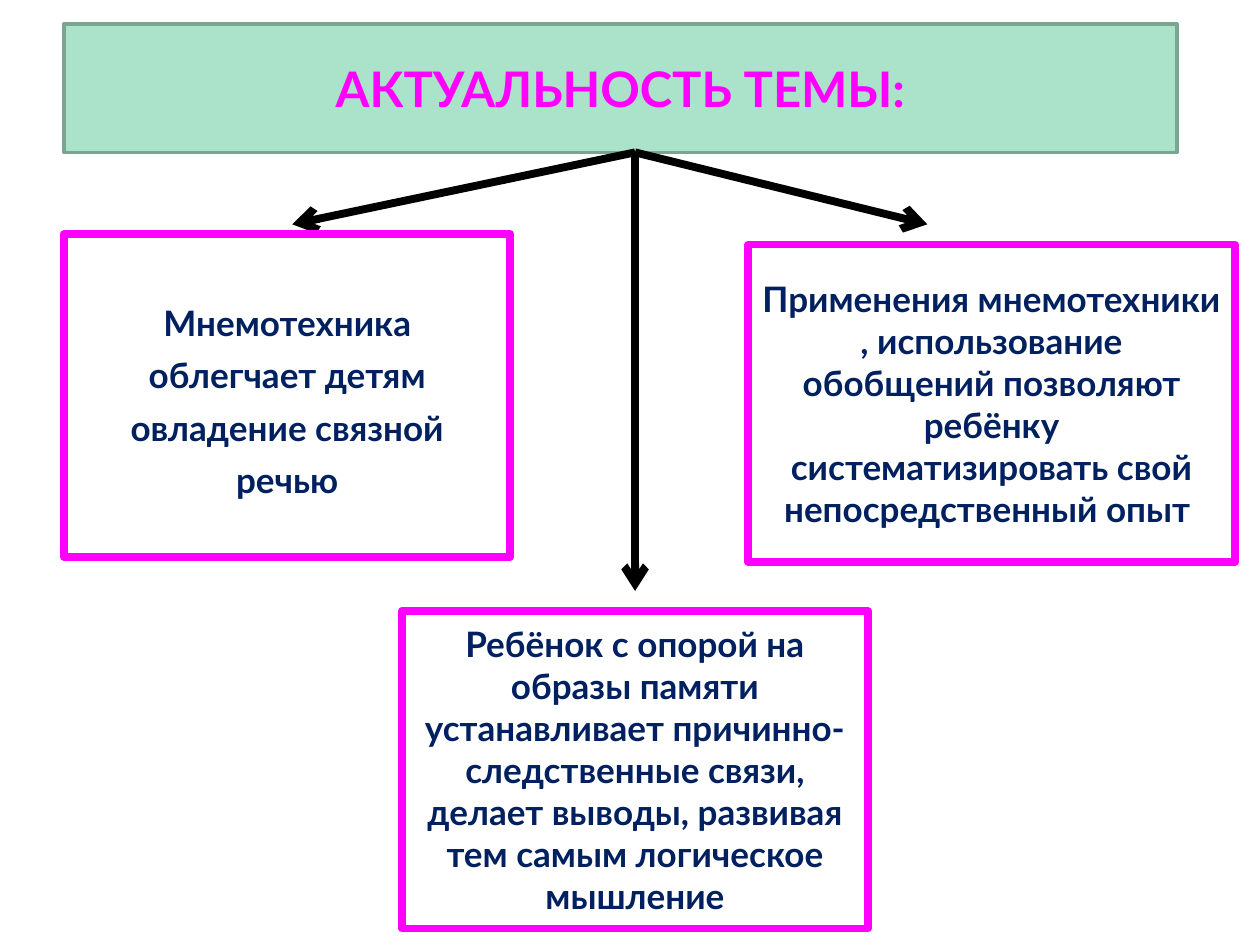
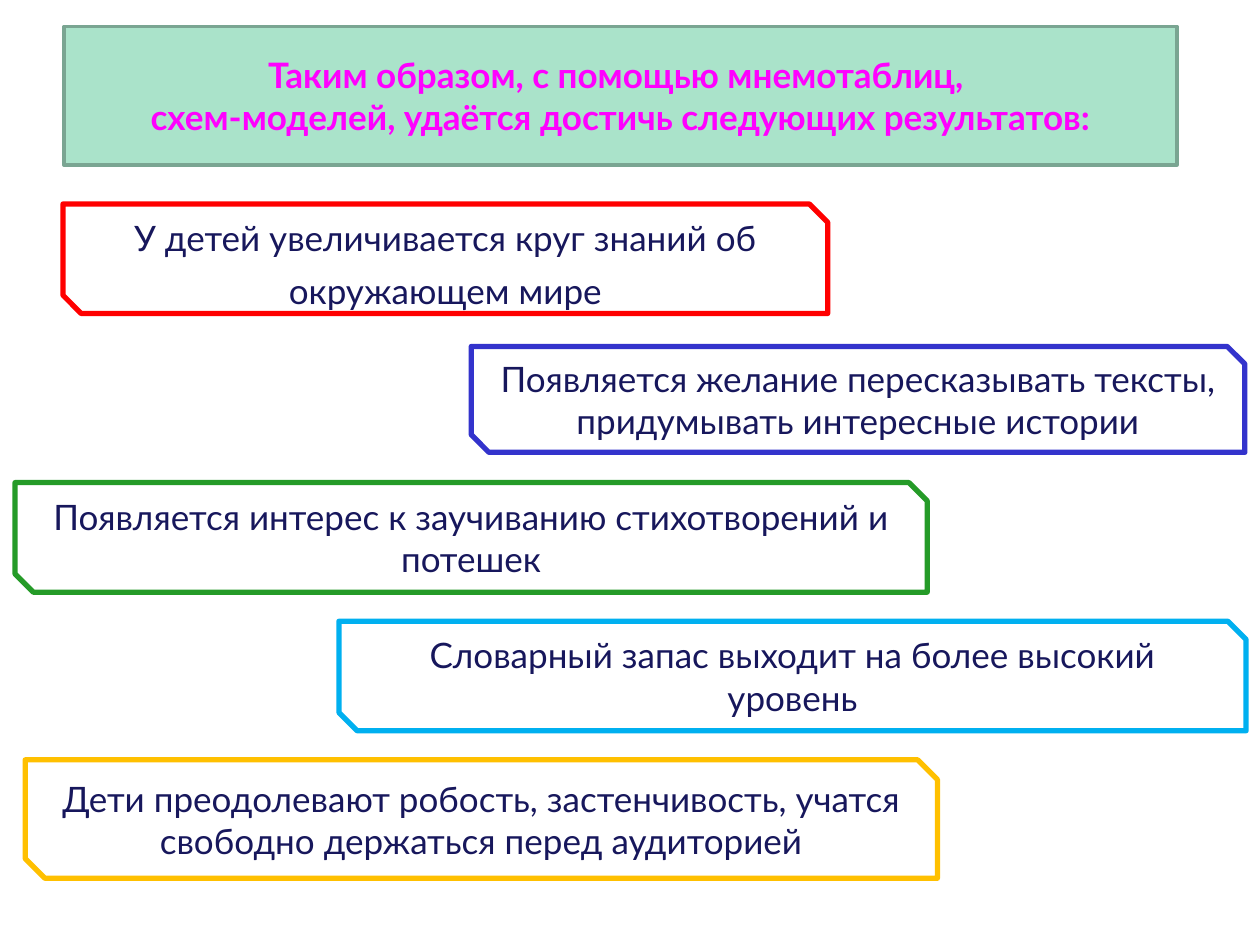
import pptx
import pptx.util
import pptx.dml.color
import pptx.enum.shapes
import pptx.enum.text
import pptx.oxml.ns
from lxml import etree

Pt = pptx.util.Pt
RGB = pptx.dml.color.RGBColor
SHAPE = pptx.enum.shapes.MSO_SHAPE
MIDDLE = pptx.enum.text.MSO_ANCHOR.MIDDLE
CENTER = pptx.enum.text.PP_ALIGN.CENTER
NO_FIT = pptx.enum.text.MSO_AUTO_SIZE.NONE

WHITE = RGB(0xFF, 0xFF, 0xFF)
BLACK = RGB(0x00, 0x00, 0x00)
MINT = RGB(0xAA, 0xE3, 0xCA)
MINT_EDGE = RGB(0x7A, 0xA5, 0x92)
MAGENTA = RGB(0xFF, 0x00, 0xFF)
NAVY = RGB(0x00, 0x20, 0x60)
INDIGO = RGB(0x17, 0x17, 0x5C)
RED = RGB(0xFF, 0x00, 0x00)
BLUE = RGB(0x33, 0x33, 0xCC)
GREEN = RGB(0x25, 0x9B, 0x28)
SKY = RGB(0x00, 0xB0, 0xF0)
AMBER = RGB(0xFF, 0xC0, 0x00)

FONT = "Lato"
TITLE_LEFT, TITLE_WIDTH = 36.5, 636

# Slide 1: left, top, width, height, line spacing, side inset, text
REASONS = [
    (36.7, 133.9, 254.9, 184.3, 1.25, 12,
     "Мнемотехника облегчает детям овладение связной речью"),
    (427.7, 139.7, 277.9, 181.4, 1, 7.2,
     "Применения мнемотехники , использование обобщений позволяют "
     "ребёнку систематизировать свой непосредственный опыт "),
    (229.7, 349.2, 266.4, 181.4, 1, 7.2,
     "Ребёнок с опорой на образы памяти устанавливает "
     "причинно-следственные связи, делает выводы, развивая тем самым "
     "логическое мышление"),
]
ARROW_TIPS = [(167, 128.2), (529.9, 128.2), (362.9, 337.7)]

# Slide 2: left, top, width, height, line spacing, colour, text
RESULTS = [
    (36, 116.6, 437, 62.6, 1.25, RED,
     "У детей увеличивается круг знаний об окружающем мире"),
    (269.3, 198, 442.1, 60.5, 1, BLUE,
     "Появляется желание пересказывать тексты, "
     "придумывать интересные истории"),
    (8.6, 275.8, 521.3, 62.6, 1, GREEN,
     "Появляется интерес к заучиванию стихотворений и потешек"),
    (193.7, 355, 518.4, 62.6, 1, SKY,
     "Словарный запас выходит на более высокий уровень"),
    (14.4, 434.2, 521.3, 67.7, 1, AMBER,
     "Дети преодолевают робость, застенчивость, учатся "
     "свободно держаться перед аудиторией"),
]


def paint(sp, fill, line, width):
    sp.fill.solid()
    sp.fill.fore_color.rgb = fill
    sp.line.color.rgb = line
    sp.line.width = Pt(width)


def write(sp, lines, size, color, bold, spacing=1, inset=7.2):
    """Centre the lines, one paragraph each, in the shape."""
    tf = sp.text_frame
    frame = dict(word_wrap=True, auto_size=NO_FIT, vertical_anchor=MIDDLE,
                 margin_left=Pt(inset), margin_right=Pt(inset))
    for name, value in frame.items():
        setattr(tf, name, value)
    for i, text in enumerate(lines):
        p = tf.add_paragraph() if i else tf.paragraphs[0]
        p.alignment, p.line_spacing = CENTER, spacing
        r = p.add_run()
        r.text = text
        for name, value in dict(name=FONT, size=Pt(size), bold=bold).items():
            setattr(r.font, name, value)
        r.font.color.rgb = color


def add_title_slide(prs, top, height, lines, size):
    """Title-only slide with the mint title band."""
    s = prs.slides.add_slide(prs.slide_layouts[5])
    sp = s.shapes.title
    place = dict(left=TITLE_LEFT, top=top, width=TITLE_WIDTH, height=height)
    for name, value in place.items():
        setattr(sp, name, Pt(value))
    paint(sp, MINT, MINT_EDGE, 2)
    write(sp, lines, size, MAGENTA, True)
    return s


def add_box(s, kind, box, text, edge, width, color, bold, spacing, inset=7.2):
    sp = s.shapes.add_shape(kind, *map(Pt, box))
    sp.shadow.inherit = False
    paint(sp, WHITE, edge, width)
    write(sp, [text], 20, color, bold, spacing, inset)


def add_arrow(s, start, tip):
    cn = s.shapes.add_connector(pptx.enum.shapes.MSO_CONNECTOR.STRAIGHT,
                                *map(Pt, start + tip))
    cn.line.color.rgb = BLACK
    cn.line.width = Pt(4.5)
    qn = pptx.oxml.ns.qn
    etree.SubElement(cn.line._get_or_add_ln(), qn("a:tailEnd"), type="arrow")
    etree.SubElement(cn._element.spPr, qn("a:effectLst"))


def relevance_slide(prs):
    top, height = 13.7, 73.4
    s = add_title_slide(prs, top, height, ["АКТУАЛЬНОСТЬ ТЕМЫ:"], 28)
    # Arrows fan out from under the title band
    for tip in ARROW_TIPS:
        add_arrow(s, (362.9, top + height), tip)
    for *box, spacing, inset, text in REASONS:
        add_box(s, SHAPE.RECTANGLE, box, text, MAGENTA, 4.5, NAVY, True,
                spacing, inset)


def results_slide(prs):
    s = add_title_slide(prs, 15.1, 79.2, [
        "Таким образом, с помощью мнемотаблиц, ",
        "схем-моделей, удаётся достичь следующих результатов:"], 20)
    # Staggered result cards
    for *box, spacing, edge, text in RESULTS:
        add_box(s, SHAPE.SNIP_2_DIAG_RECTANGLE, box, text, edge, 3, INDIGO,
                False, spacing)


def main():
    prs = pptx.Presentation()
    prs.slide_width, prs.slide_height = Pt(720), Pt(540)
    relevance_slide(prs)
    results_slide(prs)
    prs.save("out.pptx")


if __name__ == "__main__":
    main()
